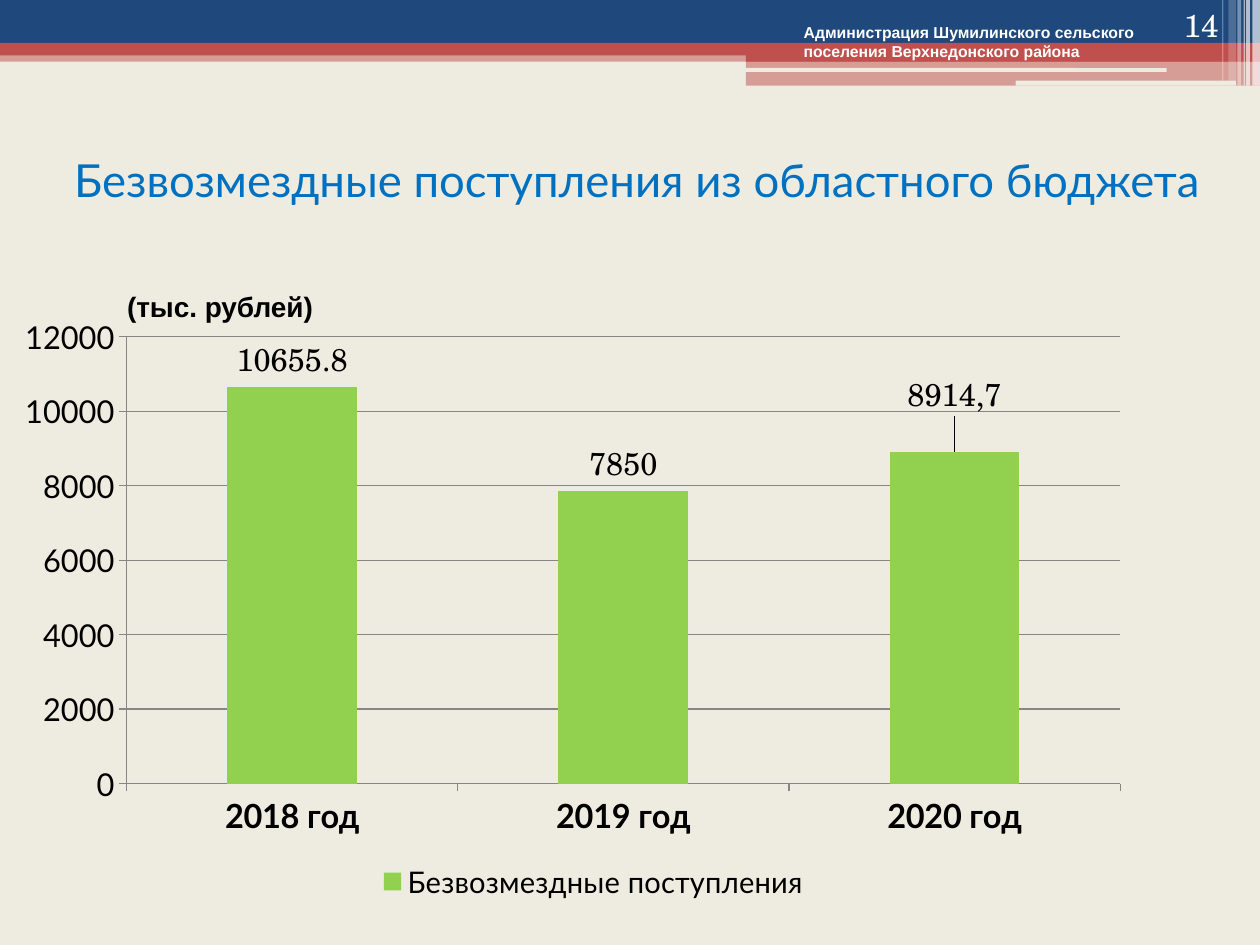
from dataclasses import dataclass

from lxml.etree import SubElement
from pptx import Presentation
from pptx.chart.data import CategoryChartData
from pptx.dml.color import RGBColor
from pptx.enum.chart import XL_CHART_TYPE as ChartType
from pptx.enum.chart import XL_LABEL_POSITION as LabelPosition
from pptx.enum.chart import XL_LEGEND_POSITION as LegendPosition
from pptx.enum.chart import XL_TICK_MARK as TickMark
from pptx.enum.shapes import MSO_SHAPE as Shape
from pptx.enum.text import MSO_ANCHOR as Anchor
from pptx.enum.text import PP_ALIGN as Align
from pptx.oxml import parse_xml
from pptx.oxml.ns import nsdecls, qn
from pptx.util import Inches, Pt


@dataclass(frozen=True)
class Theme:
    paper: str = "EEECE1"
    navy: str = "1F497D"
    red: str = "C0504D"
    white: str = "FFFFFF"
    black: str = "000000"
    title_blue: str = "0070C0"
    column_green: str = "92D050"
    grid_gray: str = "868686"
    sans: str = "Arial"
    body: str = "Lato"
    serif: str = "TeX Gyre Schola"
    title_size: int = 26
    category_size: int = 19
    value_size: int = 18
    legend_size: int = 17
    unit_size: int = 16
    header_size: int = 9


@dataclass(frozen=True)
class Box:
    left: float
    top: float
    width: float
    height: float

    def lengths(self):
        return tuple(map(Inches, (self.left, self.top, self.width, self.height)))


@dataclass(frozen=True)
class Band:
    box: Box
    color: str
    opacity: int = 100
    rounded: bool = False


@dataclass(frozen=True)
class TextStyle:
    size: int
    font: str
    color: str
    bold: bool = False
    align: Align = Align.LEFT
    anchor: Anchor = Anchor.TOP


@dataclass(frozen=True)
class Caption:
    box: Box
    text: str
    style: TextStyle


THEME = Theme()

HEADER_BANDS = (
    Band(Box(0, 0.4, 10, 0.09), THEME.red, 50),
    Band(Box(0, 0, 10, 0.34), THEME.navy),
    Band(Box(0, 0.34, 10, 0.1), THEME.red),
    Band(Box(5.92, 0.39, 4.08, 0.1), THEME.red),
    Band(Box(5.92, 0.48, 4.08, 0.2), THEME.red, 50),
    Band(Box(5.91, 0.54, 3.35, 0.03), THEME.paper, rounded=True),
    Band(Box(8.06, 0.64, 1.75, 0.04), THEME.paper, rounded=True),
)

CORNER_STRIPES = tuple(
    Band(Box(left, 0, width, height), THEME.white, opacity)
    for left, width, height, opacity in (
        (9.94, 0.06, 0.68, 65),
        (9.89, 0.03, 0.68, 65),
        (9.87, 0.01, 0.68, 60),
        (9.82, 0.03, 0.68, 40),
        (9.75, 0.06, 0.64, 20),
        (9.7, 0.01, 0.64, 30),
    )
)

TITLE = Caption(
    Box(0.12, 0.84, 9.88, 1.17),
    "Безвозмездные поступления из областного бюджета",
    TextStyle(THEME.title_size, THEME.body, THEME.title_blue,
              align=Align.CENTER, anchor=Anchor.MIDDLE),
)

CAPTIONS = (
    Caption(Box(0.91, 2.25, 1.81, 0.37), "(тыс. рублей)",
            TextStyle(THEME.unit_size, THEME.sans, THEME.black, bold=True)),
    Caption(Box(6.28, 0.13, 3.11, 0.4),
            "Администрация Шумилинского сельского поселения Верхнедонского района",
            TextStyle(THEME.header_size, THEME.sans, THEME.white, bold=True)),
    Caption(Box(8.94, 0, 0.83, 0.4), "14",
            TextStyle(THEME.value_size, THEME.serif, THEME.white,
                      align=Align.RIGHT, anchor=Anchor.BOTTOM)),
)

CHART_BOX = Box(0.2, 2.46, 8.82, 4.73)
PLOT_BOX = Box(0.07, 0.045, 0.915, 0.75)
REVENUES = {"2018 год": 10655.8, "2019 год": 7850, "2020 год": 8914.7}


def rgb(color: str) -> RGBColor:
    return RGBColor.from_string(color)


def style_font(font, size: int, face: str, color: str, bold: bool = False) -> None:
    font.size, font.name, font.bold = Pt(size), face, bold
    font.color.rgb = rgb(color)


def draw_band(slide, band: Band) -> None:
    preset = Shape.ROUNDED_RECTANGLE if band.rounded else Shape.RECTANGLE
    strip = slide.shapes.add_shape(preset, *band.box.lengths())
    strip.shadow.inherit = False
    strip.line.fill.background()
    strip.fill.solid()
    strip.fill.fore_color.rgb = rgb(band.color)
    if band.opacity < 100:
        color = strip._element.spPr.find(qn("a:solidFill")).find(qn("a:srgbClr"))
        SubElement(color, qn("a:alpha"), val=str(band.opacity * 1000))


def write_text(holder, caption: Caption) -> None:
    style = caption.style
    holder.left, holder.top, holder.width, holder.height = caption.box.lengths()
    frame = holder.text_frame
    frame.word_wrap = True
    frame.vertical_anchor = style.anchor
    paragraph = frame.paragraphs[0]
    paragraph.alignment = style.align
    run = paragraph.add_run()
    run.text = caption.text
    style_font(run.font, style.size, style.font, style.color, style.bold)


def manual_layout(**settings) -> object:
    entries = "".join(f'<c:{key} val="{value}"/>' for key, value in settings.items())
    return parse_xml(f'<c:layout {nsdecls("c")}><c:manualLayout>{entries}'
                     "</c:manualLayout></c:layout>")


def place_plot(chart, plot: Box) -> None:
    area = chart._chartSpace.chart.plotArea
    for layout in area.findall(qn("c:layout")):
        area.remove(layout)
    area.insert(0, manual_layout(layoutTarget="inner", xMode="edge", yMode="edge",
                                 x=plot.left, y=plot.top, w=plot.width, h=plot.height))


def style_axis(axis, size: int, bold: bool = False) -> None:
    axis.major_tick_mark = TickMark.OUTSIDE
    axis.minor_tick_mark = TickMark.NONE
    axis.format.line.color.rgb = rgb(THEME.grid_gray)
    style_font(axis.tick_labels.font, size, THEME.body, THEME.black, bold)


def label_columns(series) -> None:
    labels = series.data_labels
    labels.show_value = True
    labels.position = LabelPosition.OUTSIDE_END
    style_font(labels.font, THEME.value_size, THEME.serif, THEME.black)
    last_label = series.points[len(REVENUES) - 1].data_label
    run = last_label.text_frame.paragraphs[0].add_run()
    run.text = "8914,7"
    style_font(run.font, THEME.value_size, THEME.serif, THEME.black)
    last_label.position = LabelPosition.OUTSIDE_END
    last_label._dLbl.insert(1, manual_layout(x=0, y=-0.05))


def draw_chart(slide) -> None:
    data = CategoryChartData()
    data.categories = list(REVENUES)
    data.add_series("Безвозмездные поступления", list(REVENUES.values()))
    chart = slide.shapes.add_chart(
        ChartType.COLUMN_CLUSTERED, *CHART_BOX.lengths(), data).chart
    chart.has_title = False
    style_font(chart.font, THEME.value_size, THEME.serif, THEME.black)
    place_plot(chart, PLOT_BOX)

    style_axis(chart.category_axis, THEME.category_size, bold=True)
    amounts = chart.value_axis
    style_axis(amounts, THEME.value_size)
    amounts.minimum_scale, amounts.maximum_scale, amounts.major_unit = 0, 12000, 2000
    amounts.has_major_gridlines = True
    amounts.major_gridlines.format.line.color.rgb = rgb(THEME.grid_gray)

    columns = chart.plots[0]
    columns.gap_width = 155
    columns.vary_by_categories = False
    revenue = columns.series[0]
    revenue.format.fill.solid()
    revenue.format.fill.fore_color.rgb = rgb(THEME.column_green)
    label_columns(revenue)

    chart.has_legend = True
    chart.legend.position = LegendPosition.BOTTOM
    chart.legend.include_in_layout = False
    style_font(chart.legend.font, THEME.legend_size, THEME.body, THEME.black)


def main() -> None:
    deck = Presentation()
    deck.slide_width, deck.slide_height = Inches(10), Inches(7.5)
    slide = deck.slides.add_slide(deck.slide_layouts[5])
    slide.background.fill.solid()
    slide.background.fill.fore_color.rgb = rgb(THEME.paper)
    for band in HEADER_BANDS + CORNER_STRIPES:
        draw_band(slide, band)
    write_text(slide.shapes.title, TITLE)
    draw_chart(slide)
    for caption in CAPTIONS:
        write_text(slide.shapes.add_textbox(*caption.box.lengths()), caption)
    deck.save("out.pptx")


if __name__ == "__main__":
    main()
